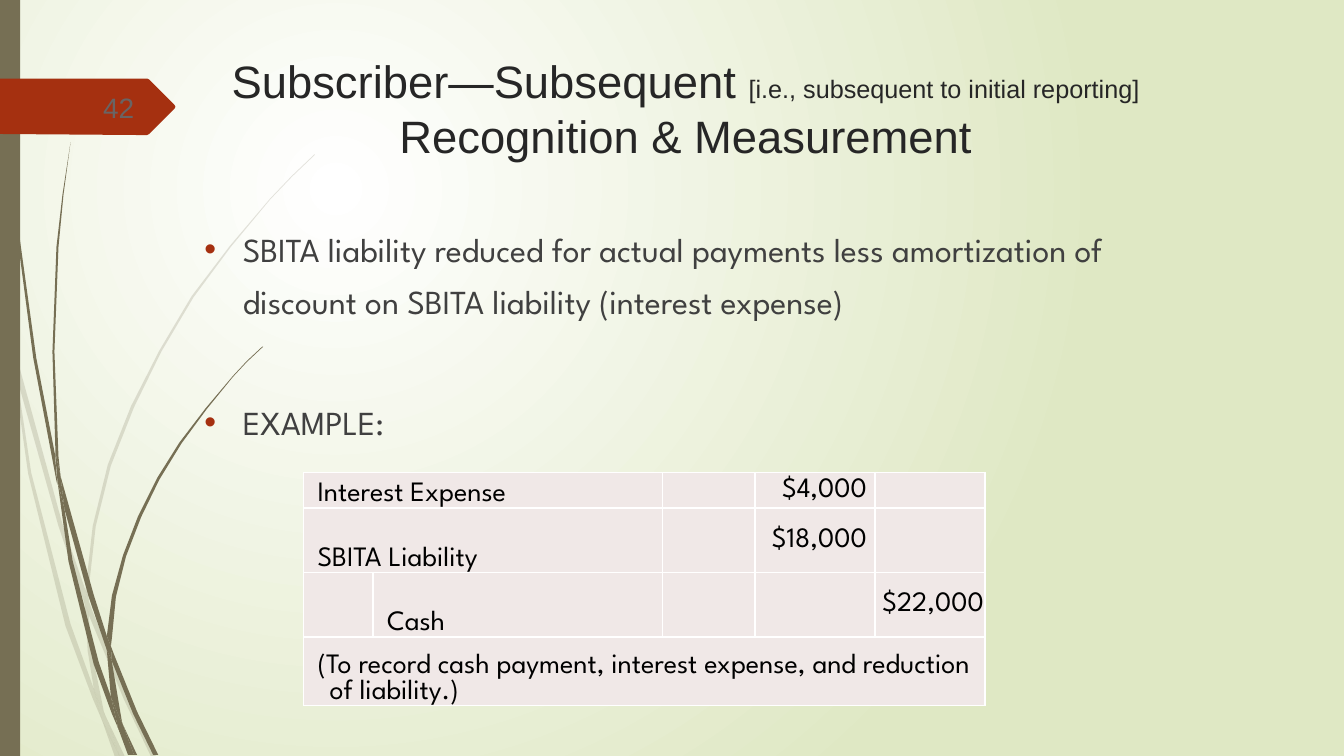
"""Build the slide on subsequent recognition and measurement for subscribers."""
from lxml import etree
from pptx import Presentation
from pptx.dml.color import RGBColor
from pptx.enum.shapes import MSO_SHAPE
from pptx.enum.text import MSO_ANCHOR, PP_ALIGN
from pptx.oxml.ns import qn
from pptx.util import Inches, Pt

RECTANGLE = MSO_SHAPE.RECTANGLE
LEFT, CENTER, RIGHT = PP_ALIGN.LEFT, PP_ALIGN.CENTER, PP_ALIGN.RIGHT
MIDDLE, BOTTOM = MSO_ANCHOR.MIDDLE, MSO_ANCHOR.BOTTOM
HEADING_FONT, BODY_FONT = "Arial", "League Spartan"
COLORS = {
    "white": "FFFFFF", "backdrop": "DFE8C4", "olive": "766F54", "rust": "A53010",
    "title": "262626", "body": "404040", "number": "696464", "cell": "F0E8E7", "black": "000000",
}

PALE_WISPS = [
    [(0.11, 3.5), (0.09, 3.22), (0, 2.82), (0, 2.99), (0.1, 3.44)],
    [(0.58, 5.22), (0.84, 5.99), (0.85, 5.86), (0.62, 5.2), (0.14, 3.45), (0.17, 3.76)],
    [(0.92, 6.07), (0.88, 5.96), (0.88, 6.1), (1.23, 6.94), (1.5, 7.51), (1.55, 7.51), (1.27, 6.92)],
    [(1.19, 7.51), (1.24, 7.51), (1.05, 7.11)],
    [(0.93, 6.83), (0.7, 6.19), (0.31, 4.69), (0.17, 3.76), (0.11, 3.5), (0.28, 4.7), (0.65, 6.21),
     (0.92, 6.93), (1.01, 7.14), (0.99, 7.07)],
    [(0.84, 5.99), (0.87, 6.46), (0.93, 6.83), (0.96, 6.92), (1.05, 7.11), (1.03, 7.06), (0.91, 6.46),
     (0.88, 6.1), (0.88, 6.08)],
    [(0.88, 5.84), (0.95, 5.22), (1.1, 4.62), (1.33, 4.04), (1.6, 3.49), (1.92, 2.95), (2.29, 2.45),
     (2.68, 1.98), (2.9, 1.75), (3.12, 1.54), (3.12, 1.53), (2.89, 1.75), (2.68, 1.97), (2.28, 2.44),
     (1.9, 2.94), (1.58, 3.48), (1.3, 4.03), (1.07, 4.61), (0.92, 5.22), (0.85, 5.84), (0.85, 5.86),
     (0.88, 5.96)],
    [(1.01, 7.14), (1.14, 7.51), (1.19, 7.51)],
    [(0.88, 6.08), (0.88, 6.1), (0.88, 5.96), (0.85, 5.86), (0.84, 5.99)],
    [(0.96, 6.92), (0.93, 6.83), (0.99, 7.07), (1.01, 7.14), (1.19, 7.51), (1.05, 7.11)],
]
DARK_WISPS = [
    [(0.07, 1.1), (0.17, 2.33), (0.33, 3.55), (0.56, 4.77), (0.57, 4.81), (0.55, 4.57), (0.55, 4.53),
     (0.36, 3.55), (0.19, 2.32), (0.08, 1.09), (0.05, 0.48), (0.04, 0), (0.03, 0), (0.04, 0.48)],
    [(0.88, 5.92), (1.06, 6.45), (1.06, 6.33), (1.06, 6.31), (0.93, 5.9), (0.6, 4.72), (0.64, 5.05)],
    [(1.13, 6.49), (1.1, 6.41), (1.11, 6.56), (1.32, 7.08), (1.52, 7.49), (1.57, 7.49), (1.36, 7.06)],
    [(1.1, 6.91), (0.98, 6.57), (0.72, 5.56), (0.64, 5.05), (0.57, 4.77), (0.68, 5.57), (0.93, 6.59),
     (1.11, 7.08), (1.17, 7.22), (1.16, 7.17)],
    [(0.6, 4.72), (0.58, 4.53), (0.54, 3.49), (0.58, 2.45), (0.63, 1.93), (0.7, 1.41), (0.62, 1.93),
     (0.56, 2.45), (0.52, 3.49), (0.55, 4.49)],
    [(1.33, 7.49), (1.36, 7.49), (1.22, 7.19)],
    [(0.57, 4.77), (0.64, 5.05), (0.6, 4.72), (0.55, 4.49), (0.55, 4.53)],
    [(1.11, 6.33), (1.15, 5.92), (1.25, 5.52), (1.4, 5.13), (1.58, 4.76), (1.8, 4.4), (2.05, 4.06),
     (2.31, 3.74), (2.45, 3.59), (2.61, 3.44), (2.6, 3.44), (2.45, 3.58), (2.31, 3.73), (2.04, 4.05),
     (1.78, 4.39), (1.56, 4.74), (1.37, 5.12), (1.22, 5.51), (1.11, 5.91), (1.06, 6.31), (1.1, 6.41)],
    [(1.17, 7.22), (1.27, 7.49), (1.31, 7.49)],
    [(1.06, 6.45), (1.1, 6.91), (1.16, 7.06), (1.22, 7.19), (1.21, 7.16), (1.11, 6.56), (1.09, 6.51)],
    [(1.06, 6.45), (1.09, 6.51), (1.11, 6.56), (1.1, 6.41), (1.06, 6.31), (1.06, 6.33)],
    [(1.16, 7.06), (1.1, 6.91), (1.16, 7.17), (1.17, 7.22), (1.3, 7.49), (1.33, 7.49), (1.22, 7.19)],
]
NUMBER_TAG = [(0, 0.78), (1.46, 0.78), (1.48, 0.79), (1.73, 1.04), (1.74, 1.06), (1.73, 1.08),
              (1.48, 1.33), (1.46, 1.34), (1.36, 1.34), (0, 1.33)]

COLUMN_WIDTHS = [0.69, 2.87, 0.92, 1.19, 1.09]
ROW_HEIGHTS = [0.35, 0.64, 0.64, 0.68]
MERGED_CELLS = [(0, 0, 1), (1, 0, 1), (3, 0, 4)]
ENTRIES = {
    (0, 0): "Interest Expense", (0, 3): "$4,000",
    (1, 0): "SBITA Liability", (1, 3): "$18,000",
    (2, 1): "Cash", (2, 4): "$22,000",
    (3, 0): "(To record cash payment, interest expense, and reduction of liability.)",
}


def rgb(name):
    """Return a named colour."""
    return RGBColor.from_string(COLORS[name])


def set_background(slide):
    """Fill the background with a circular gradient."""
    fill = slide.background.fill
    fill.gradient()
    for stop, name in zip(fill.gradient_stops, ("white", "backdrop")):
        stop.color.rgb = rgb(name)
    gradient = next(slide.element.iter(qn("a:gradFill")))
    gradient.remove(gradient.find(qn("a:lin")))
    circle = etree.SubElement(gradient, qn("a:path"), path="circle")
    etree.SubElement(circle, qn("a:fillToRect"), l="50000", t="50000", r="100000", b="100000")


def paint(shape, color, opacity=100):
    """Give a shape a plain fill with no line or shadow."""
    shape.shadow.inherit = False
    shape.line.fill.background()
    shape.fill.solid()
    shape.fill.fore_color.rgb = rgb(color)
    if opacity < 100:
        fill_color = next(shape.element.spPr.iter(qn("a:srgbClr")))
        etree.SubElement(fill_color, qn("a:alpha"), val=str(opacity * 1000))


def add_outline(slide, points, color, opacity=100):
    """Draw a closed outline through points given in inches."""
    start, *others = [(Inches(x), Inches(y)) for x, y in points]
    builder = slide.shapes.build_freeform(*start)
    builder.add_line_segments(others, close=True)
    paint(builder.convert_to_shape(), color, opacity)


def add_text_frame(slide, left, top, width, height):
    """Add a wrapping text box and return its frame."""
    box = slide.shapes.add_textbox(Inches(left), Inches(top), Inches(width), Inches(height))
    box.text_frame.word_wrap = True
    return box.text_frame


def style_font(font, name, size, color):
    """Set the typeface, size and colour of a font."""
    font.name, font.size = name, Pt(size)
    font.color.rgb = rgb(color)


def set_hanging_indent(paragraph, inches):
    """Hang the first line of a paragraph and return its properties."""
    properties = paragraph._p.get_or_add_pPr()
    properties.set("marL", str(Inches(inches)))
    properties.set("indent", str(-Inches(inches)))
    return properties


def add_title(slide):
    """Add the centred two-size title."""
    frame = add_text_frame(slide, 1.93, 0.44, 9.74, 0.98)
    frame.margin_top = Inches(0.09)
    paragraph = frame.paragraphs[0]
    paragraph.alignment = CENTER
    for text, size in (("Subscriber—Subsequent ", 32.4),
                       ("[i.e., subsequent to initial reporting] ", 18),
                       ("Recognition & Measurement", 32.4)):
        run = paragraph.add_run()
        run.text = text
        style_font(run.font, HEADING_FONT, size, "title")


def add_slide_number(slide):
    """Add the number on the tag."""
    frame = add_text_frame(slide, 0.58, 0.86, 0.85, 0.4)
    frame.text, frame.vertical_anchor = "42", MIDDLE
    paragraph = frame.paragraphs[0]
    paragraph.alignment = RIGHT
    style_font(paragraph.runs[0].font, HEADING_FONT, 20, "number")


def add_bullets(slide):
    """Add the two bulleted statements."""
    frame = add_text_frame(slide, 1.93, 2.1, 9.36, 2.3)
    frame.text = ("SBITA liability reduced for actual payments less amortization of discount "
                  "on SBITA liability (interest expense)\nEXAMPLE:")
    for paragraph, space in zip(frame.paragraphs, (0, 49)):
        paragraph.space_before, paragraph.line_spacing = Pt(space), 1.3
        style_font(paragraph.runs[0].font, BODY_FONT, 24, "body")
        properties = set_hanging_indent(paragraph, 0.38)
        bullet_color = etree.SubElement(properties, qn("a:buClr"))
        etree.SubElement(bullet_color, qn("a:srgbClr"), val=COLORS["rust"])
        etree.SubElement(properties, qn("a:buFont"), typeface="Arial")
        etree.SubElement(properties, qn("a:buChar"), char="•")


def style_cell(cell, text, column):
    """Fill, border and label one cell of the journal entry."""
    properties = cell._tc.get_or_add_tcPr()
    for side in ("lnL", "lnR", "lnT", "lnB"):
        border = etree.SubElement(properties, qn(f"a:{side}"), w=str(Pt(1)))
        border_fill = etree.SubElement(border, qn("a:solidFill"))
        etree.SubElement(border_fill, qn("a:srgbClr"), val=COLORS["white"])
    cell.fill.solid()
    cell.fill.fore_color.rgb = rgb("cell")
    is_amount = column >= 3
    cell.margin_left = Inches(0.01 if is_amount else 0.14)
    cell.margin_right = Inches(0.08 if column == 3 else 0.01)
    cell.margin_top, cell.margin_bottom = Inches(0.01), 0
    cell.vertical_anchor = MIDDLE if is_amount else BOTTOM
    cell.text = text
    paragraph = cell.text_frame.paragraphs[0]
    paragraph.alignment = RIGHT if is_amount else LEFT
    style_font(paragraph.font, BODY_FONT, 20, "black")
    for run in paragraph.runs:
        style_font(run.font, BODY_FONT, 20, "black")


def add_journal_entry(slide):
    """Add the journal entry table."""
    table = slide.shapes.add_table(
        len(ROW_HEIGHTS), len(COLUMN_WIDTHS), Inches(3.01), Inches(4.69),
        Inches(sum(COLUMN_WIDTHS)), Inches(sum(ROW_HEIGHTS))).table
    table.first_row = table.horz_banding = False
    for column, width in zip(table.columns, COLUMN_WIDTHS):
        column.width = Inches(width)
    for row_index, height in enumerate(ROW_HEIGHTS):
        table.rows[row_index].height = Inches(height)
        for column_index in range(len(COLUMN_WIDTHS)):
            text = ENTRIES.get((row_index, column_index), "")
            style_cell(table.cell(row_index, column_index), text, column_index)
    for row, first, last in MERGED_CELLS:
        table.cell(row, first).merge(table.cell(row, last))
    set_hanging_indent(table.cell(3, 0).text_frame.paragraphs[0], 0.12)


def main():
    """Assemble and save the slide."""
    presentation = Presentation()
    presentation.slide_width, presentation.slide_height = Inches(13.33), Inches(7.5)
    slide = presentation.slides.add_slide(presentation.slide_layouts[6])
    set_background(slide)
    for wisps, opacity in ((PALE_WISPS, 20), (DARK_WISPS, 100)):
        for points in wisps:
            add_outline(slide, points, "olive", opacity)
    paint(slide.shapes.add_shape(RECTANGLE, 0, 0, Inches(0.2), Inches(7.5)), "olive")
    add_outline(slide, NUMBER_TAG, "rust")
    add_slide_number(slide)
    add_title(slide)
    add_bullets(slide)
    add_journal_entry(slide)
    presentation.save("out.pptx")


if __name__ == "__main__":
    main()
